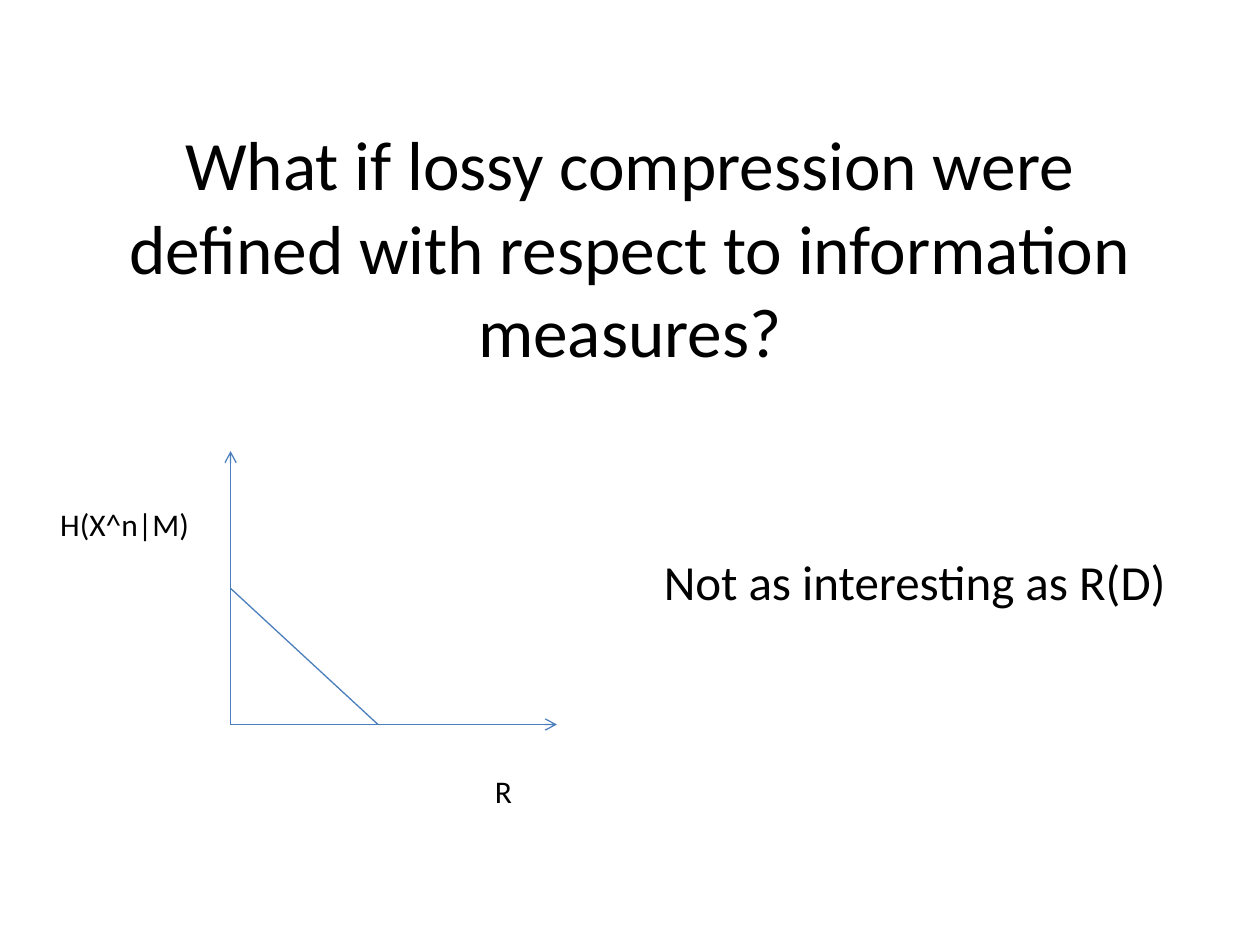
from dataclasses import dataclass

import pptx
import pptx.dml.color
import pptx.enum.shapes
import pptx.enum.text
import pptx.oxml
import pptx.oxml.ns
import pptx.util
from pptx.util import Inches

BLACK = pptx.dml.color.RGBColor(0x00, 0x00, 0x00)
BLUE = pptx.dml.color.RGBColor(0x4B, 0x7E, 0xBC)
FONT = "Calibri"


@dataclass
class Label:
    text: str
    left: float
    top: float
    width: float
    height: float
    size: float
    is_title: bool = False


@dataclass
class Segment:
    start: tuple[float, float]
    end: tuple[float, float]
    arrow: bool = False


ORIGIN = (1.83, 5.75)
SEGMENTS = [
    Segment(ORIGIN, (1.83, 3.58), arrow=True),
    Segment(ORIGIN, (4.42, 5.75), arrow=True),
    Segment((1.83, 4.67), (3, 5.75)),
]
LABELS = [
    Label(
        "What if lossy compression were defined with respect to information measures?",
        0.5, 1.33, 9, 1.25, 39.6, is_title=True,
    ),
    Label("R", 3.83, 6.08, 0.34, 0.4, 18),
    Label("H(X^n|M)", 0.38, 3.96, 1.24, 0.4, 18),
    Label("Not as interesting as R(D)", 5.17, 4.33, 4.23, 0.57, 28),
]


def draw_label(slide: pptx.slide.Slide, label: Label) -> None:
    box = slide.shapes.add_textbox(
        Inches(label.left), Inches(label.top), Inches(label.width), Inches(label.height)
    )
    frame = box.text_frame
    frame.text = label.text
    frame.word_wrap = label.is_title
    paragraph = frame.paragraphs[0]
    if label.is_title:
        frame.vertical_anchor = pptx.enum.text.MSO_ANCHOR.MIDDLE
        paragraph.alignment = pptx.enum.text.PP_ALIGN.CENTER
    else:
        frame.auto_size = pptx.enum.text.MSO_AUTO_SIZE.SHAPE_TO_FIT_TEXT
    font = paragraph.runs[0].font
    font.name = FONT
    font.size = pptx.util.Pt(label.size)
    font.color.rgb = BLACK


def draw_segment(slide: pptx.slide.Slide, segment: Segment) -> None:
    connector = slide.shapes.add_connector(
        pptx.enum.shapes.MSO_CONNECTOR.STRAIGHT,
        *map(Inches, segment.start + segment.end),
    )
    connector.line.color.rgb = BLUE
    connector.line.width = pptx.util.Pt(0.75)
    if segment.arrow:
        head = pptx.oxml.parse_xml(
            f'<a:tailEnd {pptx.oxml.ns.nsdecls("a")} type="arrow"/>'
        )
        connector.line._get_or_add_ln().append(head)
    properties = connector._element.spPr
    properties.append(
        pptx.oxml.parse_xml(f'<a:effectLst {pptx.oxml.ns.nsdecls("a")}/>')
    )


def main() -> None:
    presentation = pptx.Presentation()
    presentation.slide_width = Inches(10)
    presentation.slide_height = Inches(7.5)
    slide = presentation.slides.add_slide(presentation.slide_layouts[6])
    title, *captions = LABELS
    draw_label(slide, title)
    for segment in SEGMENTS:
        draw_segment(slide, segment)
    for caption in captions:
        draw_label(slide, caption)
    presentation.save("out.pptx")


if __name__ == "__main__":
    main()
